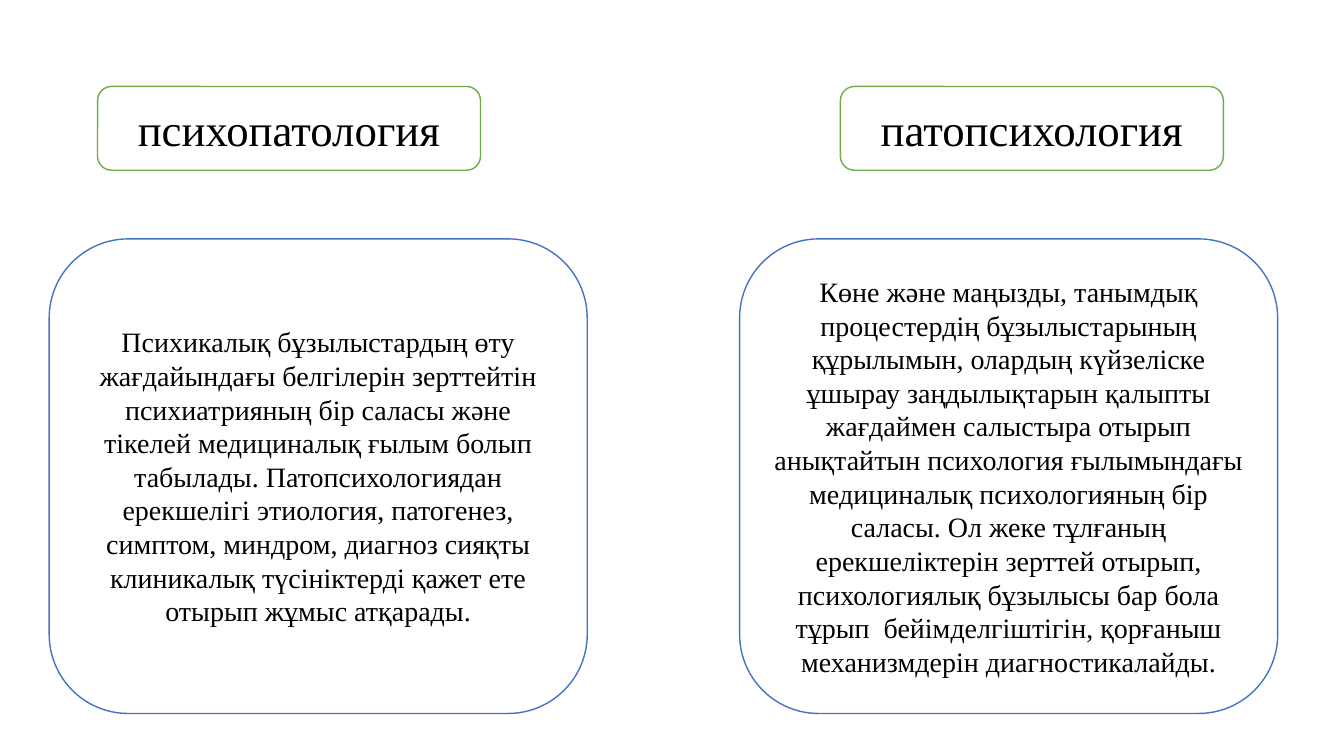
from pptx import Presentation
from pptx.dml.color import RGBColor
from pptx.enum.shapes import MSO_SHAPE
from pptx.enum.text import MSO_ANCHOR, PP_ALIGN
from pptx.util import Cm, Pt

WHITE = RGBColor(0xFF, 0xFF, 0xFF)
BLACK = RGBColor(0x00, 0x00, 0x00)
GREEN = RGBColor(0x70, 0xAD, 0x47)
BLUE = RGBColor(0x44, 0x72, 0xC4)

COLUMNS = [
    (
        2.46, "психопатология",
        1.24,
        "Психикалық бұзылыстардың өту жағдайындағы белгілерін зерттейтін "
        "психиатрияның бір саласы және тікелей медициналық ғылым болып табылады. "
        "Патопсихологиядан ерекшелігі этиология, патогенез, симптом, миндром, "
        "диагноз сияқты клиникалық түсініктерді қажет ете отырып жұмыс атқарады.",
    ),
    (
        21.18, "патопсихология",
        18.64,
        "Көне және маңызды, танымдық процестердің бұзылыстарының құрылымын, "
        "олардың күйзеліске ұшырау заңдылықтарын қалыпты жағдаймен салыстыра "
        "отырып анықтайтын психология ғылымындағы медициналық психологияның бір "
        "саласы. Ол жеке тұлғаның ерекшеліктерін зерттей отырып, психологиялық "
        "бұзылысы бар бола тұрып  бейімделгіштігін, қорғаныш механизмдерін "
        "диагностикалайды.",
    ),
]


class ComparisonPage:
    font_name = "Times New Roman"
    line_width = Pt(1)

    def __init__(self, deck):
        self.page = deck.slides.add_slide(deck.slide_layouts[6])

    def rounded_box(self, text, left, top, width, height, border, size):
        box = self.page.shapes.add_shape(
            MSO_SHAPE.ROUNDED_RECTANGLE, Cm(left), Cm(top), Cm(width), Cm(height)
        )
        box.shadow.inherit = False
        box.fill.solid()
        box.fill.fore_color.rgb = WHITE
        box.line.color.rgb = border
        box.line.width = self.line_width
        frame = box.text_frame
        frame.word_wrap = True
        frame.vertical_anchor = MSO_ANCHOR.MIDDLE
        para = frame.paragraphs[0]
        para.text = text
        para.alignment = PP_ALIGN.CENTER
        para.font.name = self.font_name
        para.font.size = Pt(size)
        para.font.color.rgb = BLACK

    def heading(self, text, left):
        self.rounded_box(text, left, 2.18, 9.65, 2.11, GREEN, 32)

    def description(self, text, left):
        self.rounded_box(text, left, 6.02, 13.56, 11.96, BLUE, 20)


def main():
    deck = Presentation()
    deck.slide_width = Cm(33.87)
    deck.slide_height = Cm(19.05)
    comparison = ComparisonPage(deck)
    for heading_left, term, description_left, meaning in COLUMNS:
        comparison.heading(term, heading_left)
        comparison.description(meaning, description_left)
    deck.save("out.pptx")


if __name__ == "__main__":
    main()
